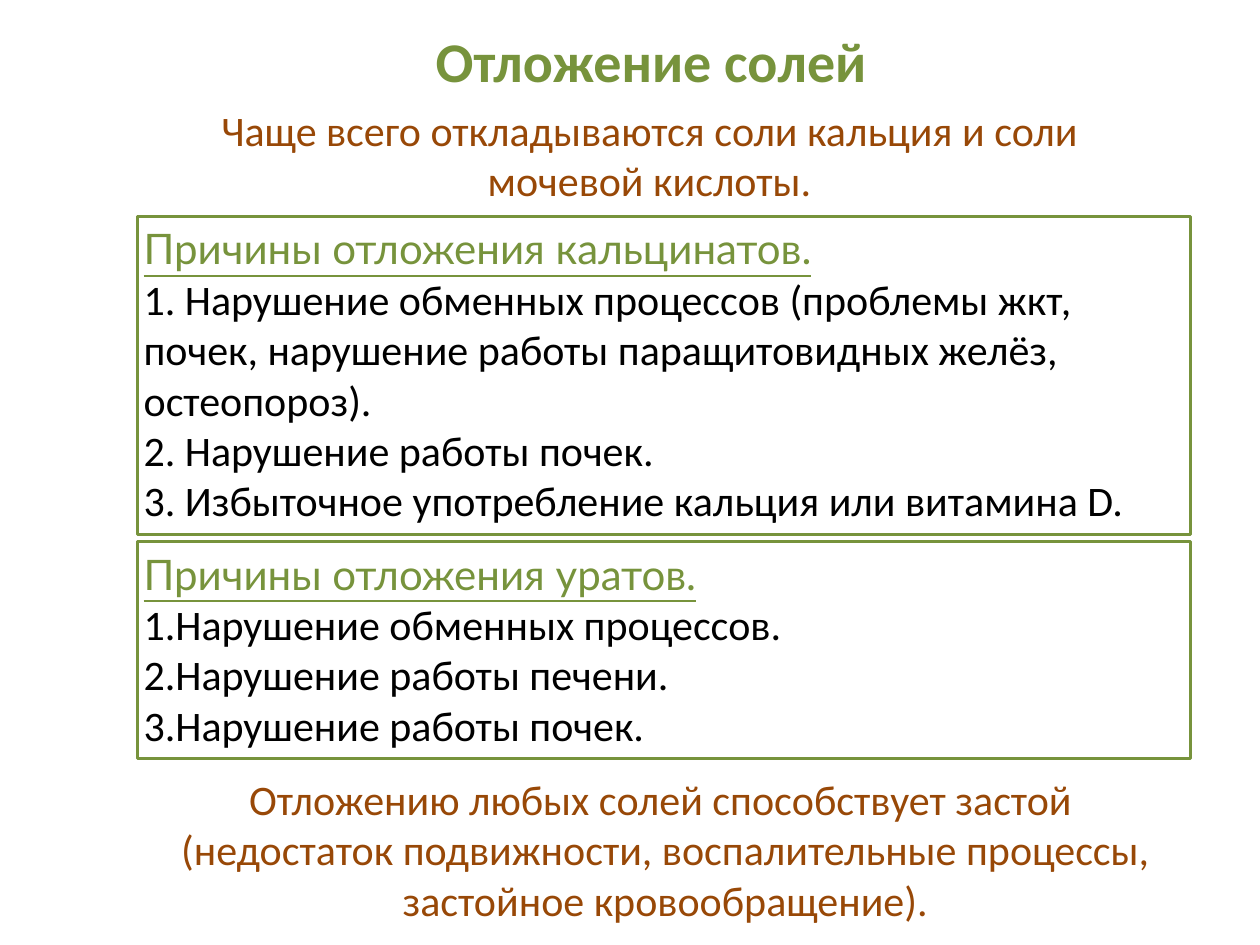
"""Build the slide on salt deposits: title, lead, two boxes of causes and a conclusion."""
from lxml import etree
from pptx import Presentation
from pptx import util as u
from pptx.dml.color import RGBColor
from pptx.enum import shapes, text
from pptx.oxml.ns import qn

PX = 9144
GREEN, BROWN, BLACK = "77933C", "984807", "000000"

TITLE = "Отложение солей"
LEAD = ["Чаще всего откладываются соли кальция и соли мочевой кислоты."]
CONCLUSION = [
    "Отложению любых солей способствует застой ",
    "(недостаток подвижности, воспалительные процессы, застойное кровообращение).",
]
CAUSES = [
    {
        "heading": "Причины отложения кальцинатов.",
        "items": [
            "1. Нарушение обменных процессов (проблемы жкт, почек, "
            "нарушение работы паращитовидных желёз, остеопороз).",
            "2. Нарушение работы почек.",
            "3. Избыточное употребление кальция или витамина D.",
        ],
        "numbered": False,
        "height": 252,
    },
    {
        "heading": "Причины отложения уратов.",
        "items": [
            "Нарушение обменных процессов.",
            "Нарушение работы печени.",
            "Нарушение работы почек.",
        ],
        "numbered": True,
        "height": 172,
    },
]
CAUSES_LEFT, CAUSES_TOP, CAUSES_WIDTH, CAUSES_GAP = 109, 172, 836, 6


def px(*lengths):
    return [u.Emu(length * PX) for length in lengths]


def colour(value):
    return RGBColor.from_string(value)


def number(para):
    props = para._p.get_or_add_pPr()
    props.set("marL", "0")
    props.set("indent", str(-50 * PX))
    etree.SubElement(props, qn("a:buFont"), typeface="+mj-lt")
    etree.SubElement(props, qn("a:buAutoNum"), type="arabicPeriod")


def write(frame, words, first=False, size=24, font="Calibri", fill=BLACK,
          bold=False, underline=False, align=text.PP_ALIGN.LEFT, numbered=False):
    para = frame.paragraphs[0] if first else frame.add_paragraph()
    para.alignment = align
    if numbered:
        number(para)
    span = para.add_run()
    span.text = words
    for style in (para.font, span.font):
        style.size, style.name = u.Pt(size), font
        style.bold, style.underline = bold, underline
        style.color.rgb = colour(fill)


def add_text(page, place, lines, wrap=True, **style):
    frame = page.shapes.add_textbox(*px(*place)).text_frame
    frame.word_wrap = wrap
    for index, line in enumerate(lines):
        write(frame, line, first=index == 0, **style)


def add_causes(page, top, heading, items, numbered, height):
    box = page.shapes.add_shape(
        shapes.MSO_SHAPE.RECTANGLE, *px(CAUSES_LEFT, top, CAUSES_WIDTH, height))
    box.shadow.inherit = False
    box.fill.background()
    box.line.color.rgb = colour(GREEN)
    box.line.width = u.Pt(1.5)
    frame = box.text_frame
    frame.word_wrap = True
    frame.vertical_anchor = text.MSO_ANCHOR.TOP
    (frame.margin_left, frame.margin_top,
     frame.margin_right, frame.margin_bottom) = px(5, 5, 5, 5)
    write(frame, heading, first=True, font="Lato", fill=GREEN, underline=True)
    for item in items:
        write(frame, item, numbered=numbered)


def main():
    deck = Presentation()
    deck.slide_width, deck.slide_height = px(1000, 750)
    page = deck.slides.add_slide(deck.slide_layouts[6])
    top = CAUSES_TOP
    for group in CAUSES:
        add_causes(page, top, **group)
        top += group["height"] + CAUSES_GAP
    add_text(page, (336, 16, 365, 64), [TITLE], wrap=False,
             size=32, fill=GREEN, bold=True)
    centred = {"fill": BROWN, "align": text.PP_ALIGN.CENTER}
    add_text(page, (109, 78, 813, 91), LEAD, **centred)
    add_text(page, (102, 609, 852, 131), CONCLUSION, **centred)
    deck.save("out.pptx")


if __name__ == "__main__":
    main()
